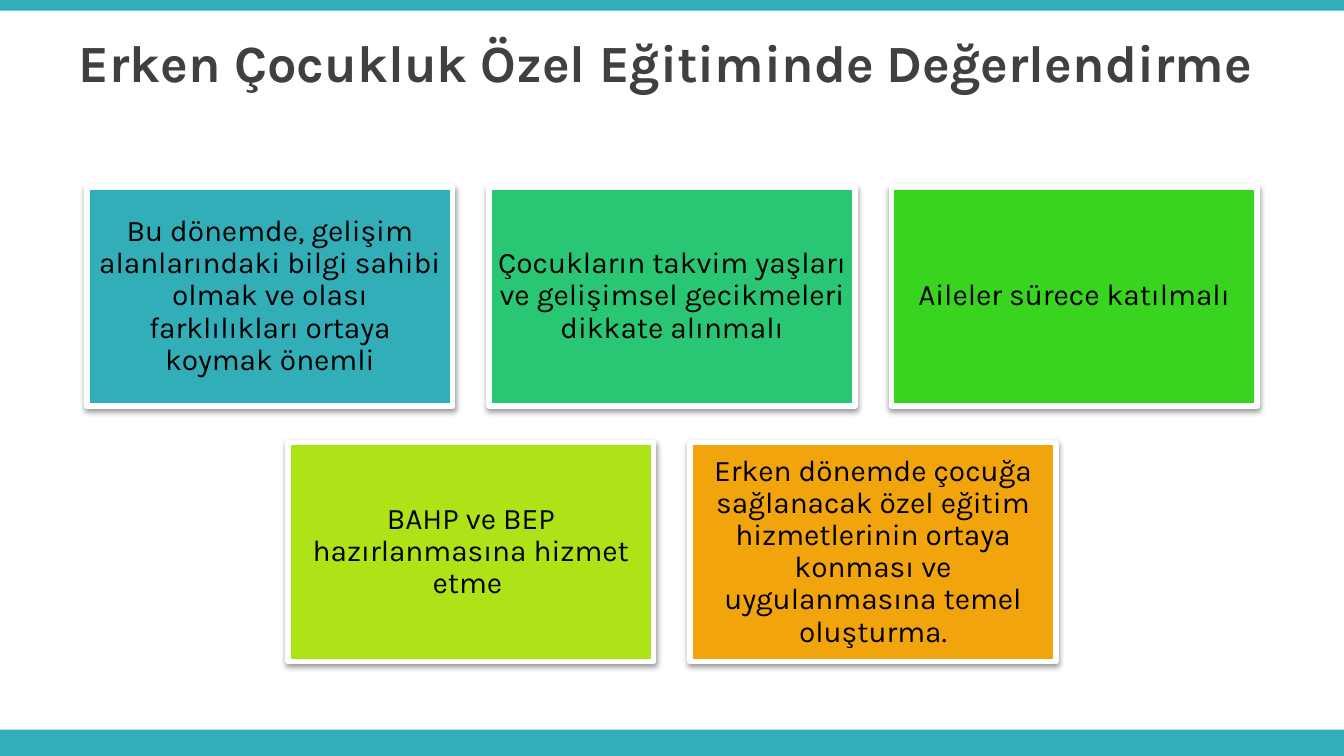
import lxml.etree
import pptx
import pptx.dml.color
import pptx.enum.shapes
import pptx.enum.text
import pptx.oxml.ns
import pptx.util

Inches = pptx.util.Inches
Pt = pptx.util.Pt
RGBColor = pptx.dml.color.RGBColor
qn = pptx.oxml.ns.qn

TEAL = RGBColor(0x32, 0xAE, 0xB8)
EMERALD = RGBColor(0x29, 0xC6, 0x73)
GREEN = RGBColor(0x38, 0xD4, 0x20)
LIME = RGBColor(0xAD, 0xE3, 0x17)
ORANGE = RGBColor(0xF2, 0xA4, 0x0D)
WHITE = RGBColor(0xFF, 0xFF, 0xFF)
BLACK = RGBColor(0x00, 0x00, 0x00)
DARK_GREY = RGBColor(0x40, 0x40, 0x40)

SLIDE_WIDTH = 10
SLIDE_HEIGHT = SLIDE_WIDTH * 9 / 16
CARD_WIDTH, CARD_HEIGHT = 2.72, 1.63
CARD_GAP = CARD_WIDTH / 10
CARDS_TOP = 1.39
CARD_INSET = Inches(0.06)

CARD_ROWS = [
    [
        ("Bu dönemde, gelişim alanlarındaki bilgi sahibi olmak ve olası "
         "farklılıkları ortaya koymak önemli", TEAL),
        ("Çocukların takvim yaşları ve gelişimsel gecikmeleri dikkate alınmalı", EMERALD),
        ("Aileler sürece katılmalı", GREEN),
    ],
    [
        ("BAHP ve BEP hazırlanmasına hizmet etme ", LIME),
        ("Erken dönemde çocuğa sağlanacak özel eğitim hizmetlerinin ortaya "
         "konması ve uygulanmasına temel oluşturma.", ORANGE),
    ],
]

presentation = pptx.Presentation()
presentation.slide_width = Inches(SLIDE_WIDTH)
presentation.slide_height = Inches(SLIDE_HEIGHT)
slide = presentation.slides.add_slide(presentation.slide_layouts[6])


def add_rectangle(left, top, width, height, color):
    rectangle = slide.shapes.add_shape(
        pptx.enum.shapes.MSO_SHAPE.RECTANGLE,
        Inches(left), Inches(top), Inches(width), Inches(height))
    rectangle.shadow.inherit = False
    rectangle.fill.solid()
    rectangle.fill.fore_color.rgb = color
    rectangle.line.fill.background()
    return rectangle


def write_centred(frame, text, size, color):
    frame.word_wrap = True
    frame.vertical_anchor = pptx.enum.text.MSO_ANCHOR.MIDDLE
    paragraph = frame.paragraphs[0]
    paragraph.text = text
    paragraph.alignment = pptx.enum.text.PP_ALIGN.CENTER
    paragraph.font.name = "Karla"
    paragraph.font.size = Pt(size)
    paragraph.font.color.rgb = color
    return paragraph


# Bands along the bottom and top edges
for band_top, band_height in [(5.43, 0.2), (0, 0.08)]:
    add_rectangle(0, band_top, SLIDE_WIDTH, band_height, TEAL)

title = slide.shapes.add_textbox(Inches(0), Inches(0.14), Inches(SLIDE_WIDTH), Inches(0.63))
heading = write_centred(
    title.text_frame, "Erken Çocukluk Özel Eğitiminde Değerlendirme ", 28, DARK_GREY)
heading.font.bold = True

# Cards, each row centred on the slide
for row, cards in enumerate(CARD_ROWS):
    row_width = len(cards) * (CARD_WIDTH + CARD_GAP) - CARD_GAP
    row_left = (SLIDE_WIDTH - row_width) / 2
    row_top = CARDS_TOP + row * (CARD_HEIGHT + CARD_GAP)
    for column, (text, color) in enumerate(cards):
        card = add_rectangle(row_left + column * (CARD_WIDTH + CARD_GAP), row_top,
                             CARD_WIDTH, CARD_HEIGHT, color)
        card.line.color.rgb = WHITE
        card.line.width = Pt(3)

        effects = card._element.spPr.find(qn("a:effectLst"))
        shadow = lxml.etree.SubElement(
            effects, qn("a:outerShdw"), blurRad=str(Pt(3.1)), dist=str(Pt(1.6)),
            dir="5400000", rotWithShape="0")
        shadow_color = lxml.etree.SubElement(shadow, qn("a:srgbClr"), val=str(BLACK))
        lxml.etree.SubElement(shadow_color, qn("a:alpha"), val="38000")

        frame = card.text_frame
        frame.margin_left = frame.margin_right = CARD_INSET
        frame.margin_top = frame.margin_bottom = CARD_INSET
        statement = write_centred(frame, text, 16, BLACK)
        statement.line_spacing = 0.9

presentation.save("out.pptx")
